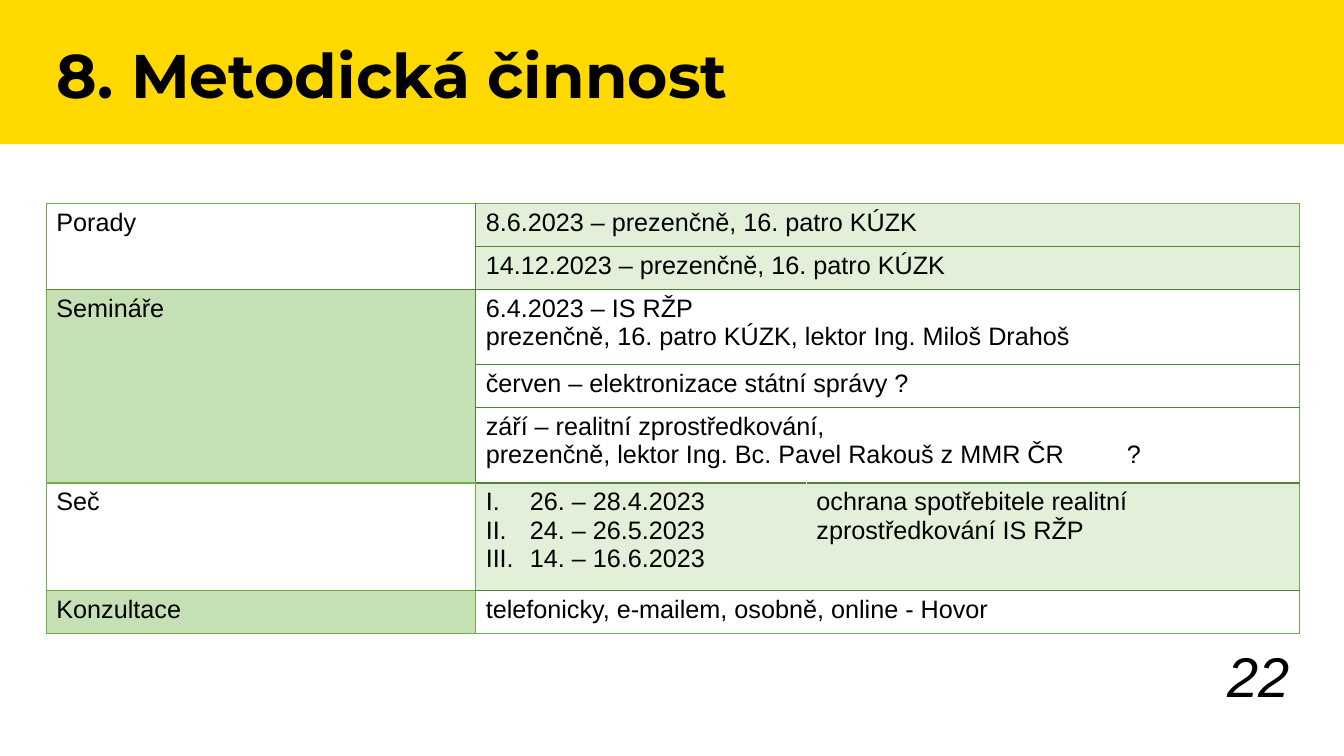
import lxml.etree
import pptx
import pptx.dml.color
import pptx.enum.text
import pptx.oxml.ns
import pptx.util

Pt = pptx.util.Pt
RGBColor = pptx.dml.color.RGBColor
ALIGN = pptx.enum.text.PP_ALIGN
ANCHOR = pptx.enum.text.MSO_ANCHOR
qn = pptx.oxml.ns.qn

YELLOW = RGBColor(0xFF, 0xD9, 0x00)
BLACK = RGBColor(0x00, 0x00, 0x00)
WHITE = RGBColor(0xFF, 0xFF, 0xFF)
PALE_GREEN = RGBColor(0xE2, 0xF0, 0xD9)
SOFT_GREEN = RGBColor(0xC5, 0xE0, 0xB4)
GREEN = RGBColor(0x70, 0xAD, 0x47)
DARK_GREEN = RGBColor(0x54, 0x82, 0x35)

BODY = {"name": "Arial", "size": Pt(18)}
TITLE = {"name": "Montserrat", "size": Pt(44), "bold": True}
NUMBER = {"name": "Arial", "size": Pt(40), "italic": True}


def write(frame, lines, style):
    frame.word_wrap = True
    for index, line in enumerate(lines):
        para = frame.add_paragraph() if index else frame.paragraphs[0]
        span = para.add_run()
        span.text = line
        span.font.color.rgb = BLACK
        for name, value in style.items():
            setattr(span.font, name, value)


def draw_border(cell, side, color):
    line = lxml.etree.Element(qn("a:ln" + side), w=str(Pt(1)))
    fill = lxml.etree.SubElement(line, qn("a:solidFill"))
    lxml.etree.SubElement(fill, qn("a:srgbClr"), val=str(color))
    # Borders come before the fill, in the order L, R, T, B
    cell_format = cell._tc.get_or_add_tcPr()
    cell_format.insert("LRTB".index(side), line)


deck = pptx.Presentation()
deck.slide_width, deck.slide_height = Pt(960), Pt(540)
page = deck.slides.add_slide(deck.slide_layouts[6])

# Title band
band = page.shapes.add_shape(1, 0, 0, Pt(960), Pt(103))
band.shadow.inherit = False
band.fill.solid()
band.fill.fore_color.rgb = YELLOW
band.line.fill.background()

# Table grid
widths = [306.7, 236.2, 352.1]
heights = [30.72, 30.72, 53.76, 30.72, 53.76, 76.8, 30.72]
table = page.shapes.add_table(
    len(heights), len(widths), Pt(33.1), Pt(145.4), Pt(sum(widths)), Pt(sum(heights))
).table
table.first_row = table.horz_banding = False
for column, width in zip(table.columns, widths):
    column.width = Pt(width)
for row, height in zip(table.rows, heights):
    row.height = Pt(height)

# Cell blocks: row, column, rows spanned, columns spanned, fill, lines
blocks = [
    (0, 0, 2, 1, WHITE, ["Porady"]),
    (0, 1, 1, 2, PALE_GREEN, ["8.6.2023 – prezenčně, 16. patro KÚZK"]),
    (1, 1, 1, 2, PALE_GREEN, ["14.12.2023 – prezenčně, 16. patro KÚZK"]),
    (2, 0, 3, 1, SOFT_GREEN, ["Semináře"]),
    (2, 1, 1, 2, WHITE, ["6.4.2023 – IS RŽP",
                         "prezenčně, 16. patro KÚZK, lektor Ing. Miloš Drahoš"]),
    (3, 1, 1, 2, WHITE, ["červen – elektronizace státní správy ?"]),
    (4, 1, 1, 2, WHITE, ["září – realitní zprostředkování,",
                         "prezenčně, lektor Ing. Bc. Pavel Rakouš z MMR ČR\t?"]),
    (5, 0, 1, 1, WHITE, ["Seč"]),
    (5, 1, 1, 1, PALE_GREEN, ["26. – 28.4.2023", "24. – 26.5.2023", "14. – 16.6.2023"]),
    (5, 2, 1, 1, PALE_GREEN, ["ochrana spotřebitele realitní zprostředkování IS RŽP"]),
    (6, 0, 1, 1, SOFT_GREEN, ["Konzultace"]),
    (6, 1, 1, 2, WHITE, ["telefonicky, e-mailem, osobně, online - Hovor"]),
]
for top, left, tall, wide, fill, lines in blocks:
    bottom, right = top + tall, left + wide
    first = table.cell(top, left)
    if tall * wide > 1:
        first.merge(table.cell(bottom - 1, right - 1))
    write(first.text_frame, lines, BODY)

    # Edge colours follow from the grid line that each edge lies on
    edges = {}
    for side, edge in (("L", left), ("R", right)):
        inner = DARK_GREEN if top < 5 else GREEN
        edges[side] = {1: inner, 2: PALE_GREEN}.get(edge, GREEN)
    for side, edge in (("T", top), ("B", bottom)):
        dark = 0 < edge < len(heights) and (left > 0 or edge == 2)
        edges[side] = DARK_GREEN if dark else GREEN

    for row in range(top, bottom):
        for column in range(left, right):
            cell = table.cell(row, column)
            cell.fill.solid()
            cell.fill.fore_color.rgb = fill
            for side, color in edges.items():
                draw_border(cell, side, color)

# Roman numbering of the dates, and the wrap of the topic beside them
for para in table.cell(5, 1).text_frame.paragraphs:
    para_format = para._p.get_or_add_pPr()
    para_format.set("marL", str(Pt(31.5)))
    para_format.set("indent", str(Pt(-31.5)))
    lxml.etree.SubElement(para_format, qn("a:buFont"), typeface="+mj-lt")
    lxml.etree.SubElement(para_format, qn("a:buAutoNum"), type="romanUcPeriod")
table.cell(5, 2).margin_right = Pt(30)

# Tab stop before the question mark
para_format = table.cell(4, 1).text_frame.paragraphs[1]._p.get_or_add_pPr()
tabs = lxml.etree.SubElement(para_format, qn("a:tabLst"))
lxml.etree.SubElement(tabs, qn("a:tab"), pos=str(Pt(458)), algn="l")

# Slide number
box = page.shapes.add_textbox(Pt(712), Pt(468.7), Pt(216), Pt(41))
box.text_frame.vertical_anchor = ANCHOR.BOTTOM
write(box.text_frame, ["22"], NUMBER)
box.text_frame.paragraphs[0].alignment = ALIGN.RIGHT

# Title
box = page.shapes.add_textbox(Pt(33.1), Pt(28.8), Pt(887), Pt(73.4))
write(box.text_frame, ["8. Metodická činnost"], TITLE)
box.text_frame.paragraphs[0].line_spacing = 0.9

deck.save("out.pptx")
